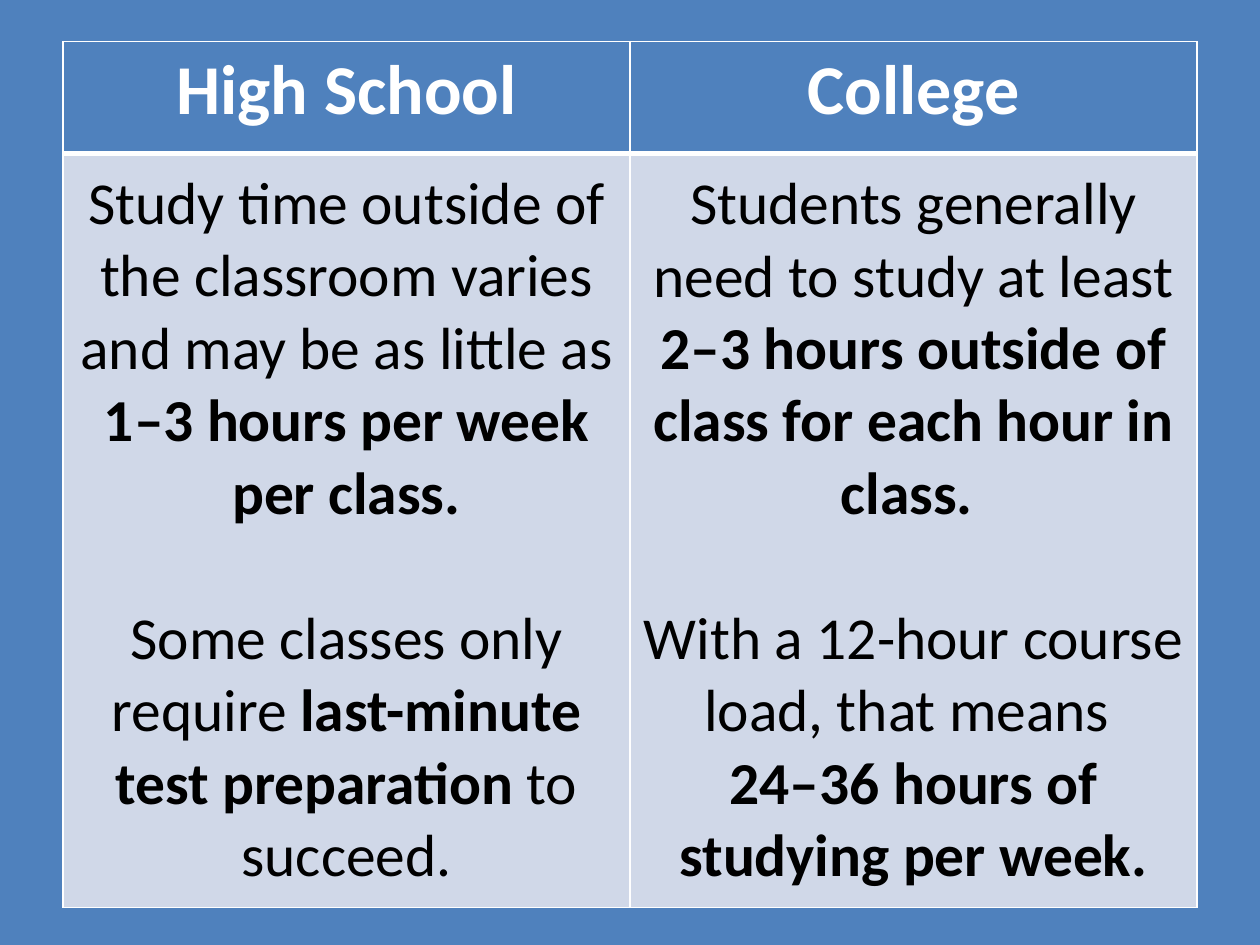
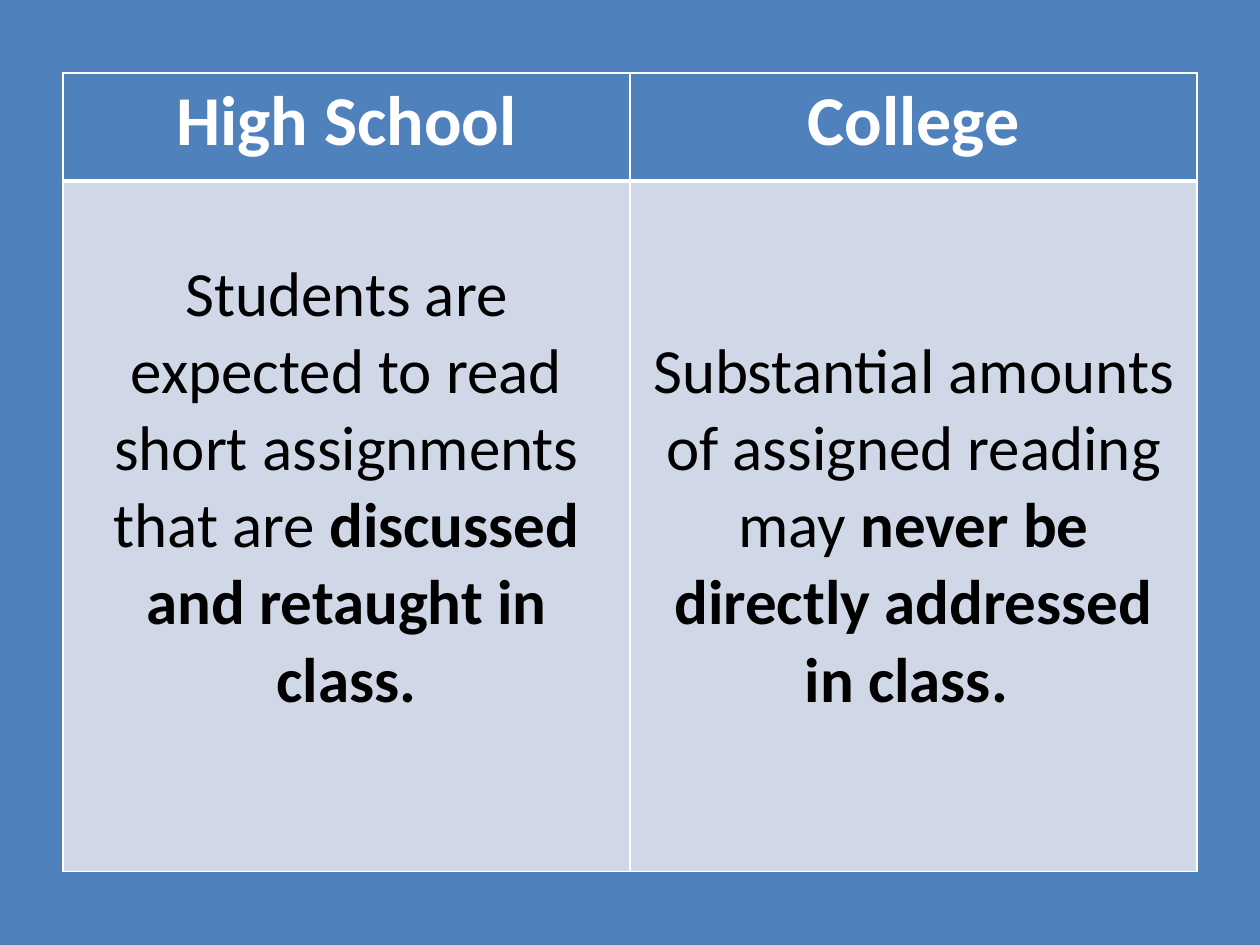
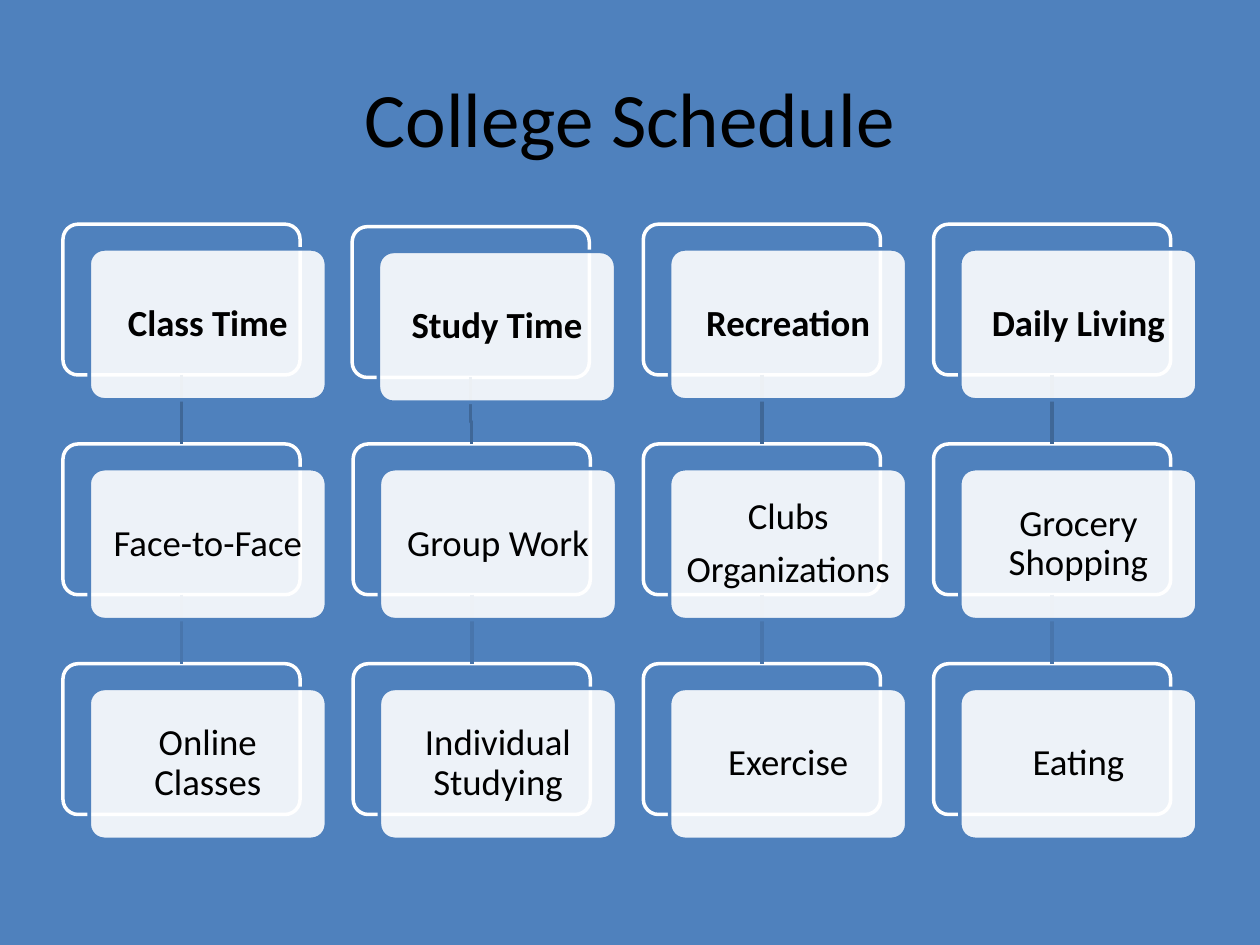
from dataclasses import dataclass
from typing import NamedTuple

from lxml import etree
from pptx import Presentation
from pptx.dml.color import RGBColor
from pptx.enum.shapes import MSO_CONNECTOR, MSO_SHAPE
from pptx.enum.text import MSO_ANCHOR, PP_ALIGN
from pptx.oxml.ns import qn
from pptx.util import Cm, Pt

BLUE = RGBColor(0x4F, 0x81, 0xBD)
PALE_BLUE = RGBColor(0xD0, 0xD8, 0xE8)
UPPER_LINK = RGBColor(0x3F, 0x67, 0x97)
LOWER_LINK = RGBColor(0x48, 0x75, 0xAC)
WHITE = RGBColor(0xFF, 0xFF, 0xFF)
BLACK = RGBColor(0, 0, 0)
FONT = "Calibri"
CENTER = PP_ALIGN.CENTER
MIDDLE = MSO_ANCHOR.MIDDLE
TOP = MSO_ANCHOR.TOP
ROUNDED = MSO_SHAPE.ROUNDED_RECTANGLE
STRAIGHT = MSO_CONNECTOR.STRAIGHT
TOP_SITE, BOTTOM_SITE = 0, 2

MARGIN = Cm(1.27)
CONTENT_WIDTH = Cm(22.86)
LINE_HEIGHT = 1.22

GRID_TOP = Cm(4.52)
COLUMN_PITCH = Cm(5.85)
ROW_PITCH = Cm(4.43)
CARD_WIDTH, CARD_HEIGHT = Cm(4.78), Cm(3.04)
FRONT_SHIFT_X, FRONT_SHIFT_Y = Cm(0.53), Cm(0.5)
CARD_INSET = Cm(0.2)
JOG_DROP = Cm(0.9)
CARD_FONT_SIZE = 21


class Span(NamedTuple):
    text: str
    bold: bool = False


@dataclass
class Para:
    spans: list[Span]
    gap_lines: int = 0


@dataclass
class Comparison:
    top: Cm
    header_height: Cm
    body_height: Cm
    size: int
    high_school: list[Para]
    college: list[Para]
    high_school_gap_lines: int = 0


@dataclass
class Card:
    lines: list[str]
    shift_x: Cm = Cm(0)
    shift_y: Cm = Cm(0)


COMPARISONS = [
    Comparison(
        Cm(0.84), Cm(2.26), Cm(15.19), 34,
        [
            Para([
                Span("Study time outside of the classroom varies and may be as little as "),
                Span("1–3 hours per week per class.", True),
            ]),
            Para([
                Span("Some classes only require "),
                Span("last-minute test preparation", True),
                Span(" to succeed."),
            ], gap_lines=1),
        ],
        [
            Para([
                Span("Students generally need to study at least "),
                Span("2–3 hours outside of class for each hour in class. ", True),
            ]),
            Para([Span("With a 12-hour course load, that means ")], gap_lines=1),
            Para([Span("24–36 hours of studying per week.", True)]),
        ],
    ),
    Comparison(
        Cm(1.47), Cm(2.18), Cm(13.92), 36,
        [
            Para([
                Span("Students are expected to read short assignments that are "),
                Span("discussed and retaught in class.", True),
            ]),
        ],
        [
            Para([
                Span("Substantial amounts of assigned reading may "),
                Span("never be directly addressed in class. ", True),
            ]),
        ],
        high_school_gap_lines=1,
    ),
]

SCHEDULE = [
    [Card(["Class Time"]), Card(["Face-to-Face"]), Card(["Online Classes"])],
    [
        Card(["Study Time"], Cm(-0.02), Cm(0.05)),
        Card(["Group Work"]),
        Card(["Individual Studying"]),
    ],
    [Card(["Recreation"]), Card(["Clubs", "Organizations"]), Card(["Exercise"])],
    [Card(["Daily Living"]), Card(["Grocery Shopping"]), Card(["Eating"])],
]


def add_page(deck):
    page = deck.slides.add_slide(deck.slide_layouts[6])
    page.background.fill.solid()
    page.background.fill.fore_color.rgb = BLUE
    return page


def write_paragraphs(frame, paras: list[Para], size: int, color: RGBColor) -> None:
    for index, para in enumerate(paras):
        paragraph = frame.add_paragraph() if index else frame.paragraphs[0]
        paragraph.alignment = CENTER
        paragraph.font.name = FONT
        paragraph.font.size = Pt(size)
        paragraph.font.color.rgb = color
        if para.gap_lines:
            paragraph.space_before = Pt(para.gap_lines * size * LINE_HEIGHT)
        for span in para.spans:
            run = paragraph.add_run()
            run.text = span.text
            run.font.bold = span.bold


def set_borders(cell, top: int, bottom: int) -> None:
    properties = cell._tc.get_or_add_tcPr()
    widths = {"lnL": 1, "lnR": 1, "lnT": top, "lnB": bottom}
    for index, (side, width) in enumerate(widths.items()):
        line = etree.Element(qn(f"a:{side}"), w=str(Pt(width)))
        fill = etree.SubElement(line, qn("a:solidFill"))
        etree.SubElement(fill, qn("a:srgbClr"), val=str(WHITE))
        properties.insert(index, line)


def fill_cell(cell, paras: list[Para], size: int, color: RGBColor,
              fill: RGBColor, anchor, top: int, bottom: int) -> None:
    cell.fill.solid()
    cell.fill.fore_color.rgb = fill
    cell.vertical_anchor = anchor
    set_borders(cell, top, bottom)
    write_paragraphs(cell.text_frame, paras, size, color)


def add_comparison(page, comparison: Comparison) -> None:
    height = comparison.header_height + comparison.body_height
    table = page.shapes.add_table(
        2, 2, MARGIN, comparison.top, CONTENT_WIDTH, height).table
    table.horz_banding = False
    table.rows[0].height = comparison.header_height
    table.rows[1].height = comparison.body_height
    columns = [("High School", comparison.high_school), ("College", comparison.college)]
    for index, (heading, paras) in enumerate(columns):
        fill_cell(table.cell(0, index), [Para([Span(heading, True)])],
                  40, WHITE, BLUE, TOP, 1, 3)
        fill_cell(table.cell(1, index), paras,
                  comparison.size, BLACK, PALE_BLUE, MIDDLE, 3, 1)
    gap = Pt(comparison.high_school_gap_lines * comparison.size * LINE_HEIGHT)
    table.cell(1, 0).margin_bottom = Cm(0.13) + gap


def add_title(page, text: str) -> None:
    box = page.shapes.add_textbox(MARGIN, Cm(0.76), CONTENT_WIDTH, Cm(3.18))
    box.text_frame.word_wrap = True
    box.text_frame.vertical_anchor = MIDDLE
    write_paragraphs(box.text_frame, [Para([Span(text)])], 44, BLACK)


def add_rounded(page, left: int, top: int, fill: RGBColor, line: RGBColor):
    shape = page.shapes.add_shape(ROUNDED, left, top, CARD_WIDTH, CARD_HEIGHT)
    shape.adjustments[0] = 0.1
    shape.shadow.inherit = False
    shape.fill.solid()
    shape.fill.fore_color.rgb = fill
    shape.line.color.rgb = line
    shape.line.width = Pt(2)
    return shape


def add_link(page, upper, lower, color: RGBColor) -> None:
    start_x = upper.left + upper.width // 2
    end_x = lower.left + lower.width // 2
    start_y = upper.top + upper.height
    if start_x == end_x:
        link = page.shapes.add_connector(STRAIGHT, start_x, start_y, end_x, lower.top)
        link.begin_connect(upper, BOTTOM_SITE)
        link.end_connect(lower, TOP_SITE)
        etree.SubElement(link._element.spPr, qn("a:effectLst"))
    else:
        jog_y = start_y + JOG_DROP
        builder = page.shapes.build_freeform(start_x, start_y)
        builder.add_line_segments(
            [(start_x, jog_y), (end_x, jog_y), (end_x, lower.top)], close=False)
        link = builder.convert_to_shape()
        link.fill.background()
        link.shadow.inherit = False
    link.line.color.rgb = color
    link.line.width = Pt(2)


def add_front(page, frame, card: Card, bold: bool) -> None:
    front = add_rounded(page, frame.left + FRONT_SHIFT_X, frame.top + FRONT_SHIFT_Y,
                        WHITE, BLUE)
    color = front._element.spPr.find(qn("a:solidFill")).find(qn("a:srgbClr"))
    etree.SubElement(color, qn("a:alpha"), val="90000")
    text = front.text_frame
    text.word_wrap = True
    text.vertical_anchor = MIDDLE
    text.margin_left = text.margin_right = CARD_INSET
    text.margin_top = text.margin_bottom = CARD_INSET
    paras = [Para([Span(line, bold)]) for line in card.lines]
    write_paragraphs(text, paras, CARD_FONT_SIZE, BLACK)
    for paragraph in text.paragraphs:
        paragraph.line_spacing = 0.9
        paragraph.space_after = Pt(0.35 * CARD_FONT_SIZE)


def add_schedule(page) -> None:
    for column, cards in enumerate(SCHEDULE):
        frames = [
            add_rounded(page, MARGIN + column * COLUMN_PITCH + card.shift_x,
                        GRID_TOP + row * ROW_PITCH + card.shift_y, BLUE, WHITE)
            for row, card in enumerate(cards)
        ]
        for upper, lower, color in zip(frames, frames[1:], (UPPER_LINK, LOWER_LINK)):
            add_link(page, upper, lower, color)
        for row, (frame, card) in enumerate(zip(frames, cards)):
            add_front(page, frame, card, bold=row == 0)


def main() -> None:
    deck = Presentation()
    deck.slide_width, deck.slide_height = Cm(25.4), Cm(19.05)
    for comparison in COMPARISONS:
        add_comparison(add_page(deck), comparison)
    page = add_page(deck)
    add_title(page, "College Schedule")
    add_schedule(page)
    deck.save("out.pptx")


if __name__ == "__main__":
    main()
